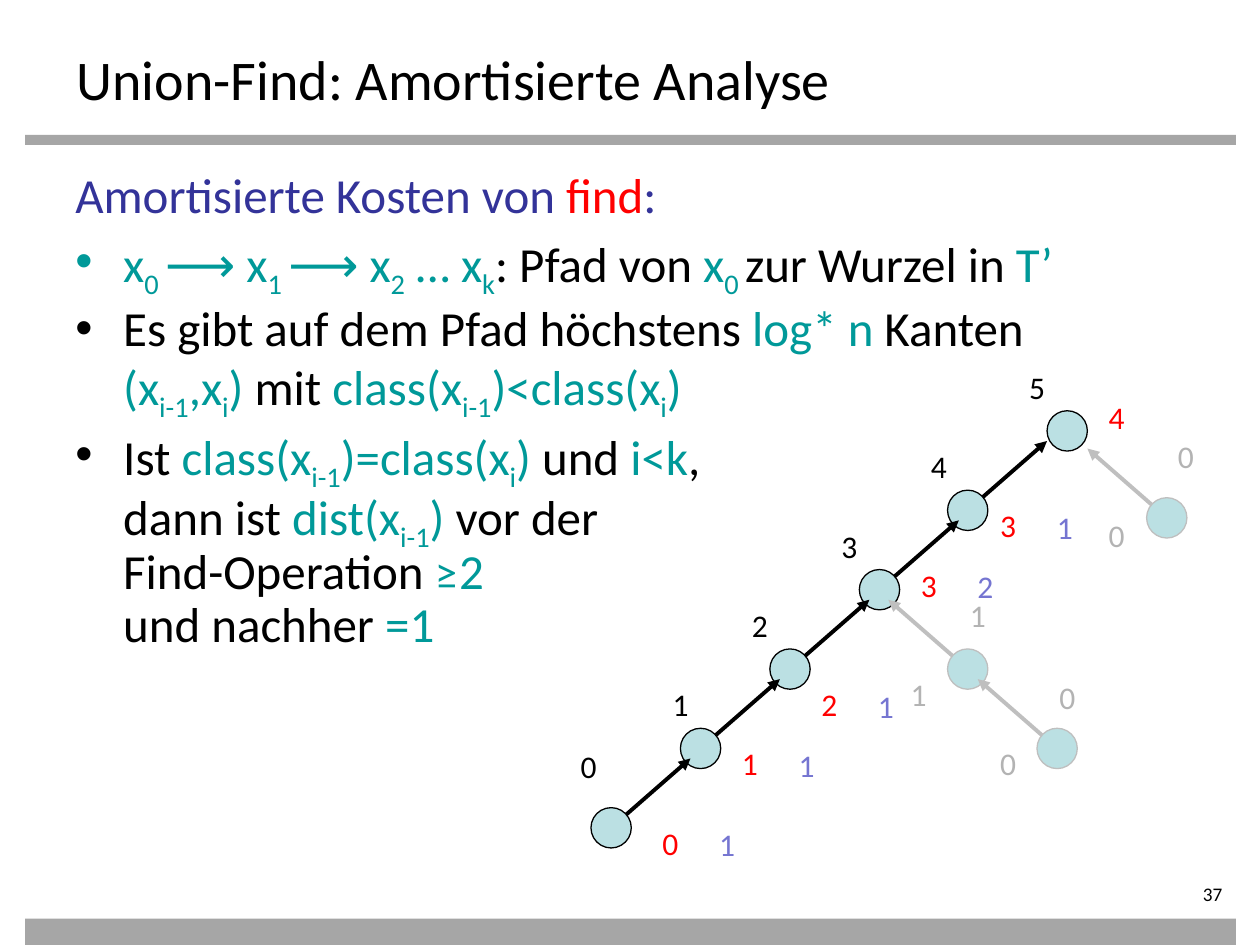
"""Build the slide on the amortised analysis of union-find."""
from lxml import etree
from pptx import Presentation
from pptx.dml.color import RGBColor
from pptx.enum.shapes import MSO_CONNECTOR, MSO_SHAPE
from pptx.enum.text import MSO_ANCHOR, PP_ALIGN
from pptx.oxml.ns import qn
from pptx.util import Pt

PX = 9144
STRAIGHT = MSO_CONNECTOR.STRAIGHT
RECTANGLE, OVAL = MSO_SHAPE.RECTANGLE, MSO_SHAPE.OVAL
TOP, LEFT, RIGHT = MSO_ANCHOR.TOP, PP_ALIGN.LEFT, PP_ALIGN.RIGHT
BLACK, RED, TEAL, NAVY = "000000", "FF0000", "009999", "333399"
VIOLET, GREY_TEXT, GREY_LINE = "7575D1", "B3B3B3", "BFBFBF"
BAR, NODE = "A6A6A6", "BBE0E3"
NODE_SIZE, EDGE_WIDTH, EDGE_HEIGHT = 32, 63, 55


def color(value):
    return RGBColor.from_string(value)


def add_text(box, text, size, text_color, wrap=False, align=LEFT):
    left, top, width, height = box
    shape = slide.shapes.add_textbox(left * PX, top * PX, width * PX, height * PX)
    frame = shape.text_frame
    frame.word_wrap = wrap
    frame.vertical_anchor = TOP
    paragraph = frame.paragraphs[0]
    paragraph.text = text
    paragraph.alignment = align
    paragraph.font.name = "Calibri"
    paragraph.font.size = Pt(size)
    paragraph.font.color.rgb = color(text_color)
    return frame


presentation = Presentation()
presentation.slide_width = 1000 * PX
presentation.slide_height = 750 * PX
slide = presentation.slides.add_slide(presentation.slide_layouts[6])

for top, height in [(107, 8), (729, 21)]:
    bar = slide.shapes.add_shape(RECTANGLE, 20 * PX, top * PX, 961 * PX, height * PX)
    bar.shadow.inherit = False
    bar.fill.solid()
    bar.fill.fore_color.rgb = color(BAR)
    bar.line.fill.background()

number = add_text((870, 700, 110, 22), "37", 11, BLACK, True, RIGHT)
number.margin_top = number.margin_bottom = 0
add_text((51, 30, 900, 55), "Union-Find: Amortisierte Analyse", 32, BLACK, True)

body = [
    [("Amortisierte Kosten von ", NAVY), ("find", RED), (":", NAVY)],
    [("x_0 _⟶ x_1 _⟶ x_2_ … x_k", TEAL), (": Pfad von ", BLACK),
     ("x_0 ", TEAL), ("zur Wurzel in ", BLACK), ("T’", TEAL)],
    [("Es gibt auf dem Pfad höchstens ", BLACK), ("log* n ", TEAL),
     ("Kanten \n", BLACK), ("(x_i-1_,x_i_) ", TEAL), ("mit ", BLACK),
     ("class(x_i-1_)<class(x_i_)", TEAL)],
    [("Ist ", BLACK), ("class(x_i-1_)=class(x_i_)", TEAL), (" und ", BLACK),
     ("i<k", TEAL), (", \ndann ist ", BLACK), ("dist(x_i-1_) ", TEAL),
     ("vor der \nFind-Operation ", BLACK), ("≥2 \n", TEAL),
     ("und nachher ", BLACK), ("=1", TEAL)],
]
special_fonts = {"⟶": ("Roboto", 28), "≥": ("Lato", 24)}
frame = slide.shapes.add_textbox(50 * PX, 131 * PX, 900 * PX, 591 * PX).text_frame
frame.word_wrap = True
for index, pieces in enumerate(body):
    paragraph = frame.add_paragraph() if index else frame.paragraphs[0]
    properties = paragraph._p.get_or_add_pPr()
    properties.set("marL", str(38 * PX))
    properties.set("indent", str(-38 * PX))
    paragraph.line_spacing = 0.9
    paragraph.space_before = Pt(5.6 if index else 0)
    if index:
        etree.SubElement(properties, qn("a:buFont"), typeface="Arial")
        etree.SubElement(properties, qn("a:buChar"), char="•")
    else:
        etree.SubElement(properties, qn("a:buNone"))
    paragraph.font.name = "Calibri"
    paragraph.font.size = Pt(28)
    for text, text_color in pieces:
        for part, script in enumerate(text.split("_")):
            for symbol in special_fonts:
                script = script.replace(symbol, f"|{symbol}|")
            for chunk in filter(None, script.replace("\n", "|\n|").split("|")):
                if chunk == "\n":
                    paragraph.add_line_break()
                    continue
                run = paragraph.add_run()
                run.text = chunk
                run.font.color.rgb = color(text_color)
                if chunk in special_fonts:
                    run.font.name, size = special_fonts[chunk]
                    run.font.size = Pt(size)
                if part % 2:
                    run.font._element.set("baseline", "-25000")

path_nodes = [(831, 326), (752, 389), (682, 452), (611, 515), (540, 578), (469, 641)]
side_nodes = [(910, 395), (752, 515), (823, 578)]
nodes = [(left, top, BLACK, 1) for left, top in path_nodes]
nodes += [(left, top, GREY_LINE, -1) for left, top in side_nodes]
for index, (left, top, line_color, direction) in enumerate(nodes):
    if index:
        x, y = left + NODE_SIZE // 2, top + NODE_SIZE // 2
        edge = slide.shapes.add_connector(
            STRAIGHT, x * PX, y * PX,
            (x + direction * EDGE_WIDTH) * PX, (y - EDGE_HEIGHT) * PX)
        edge.line.color.rgb = color(line_color)
        edge.line.width = Pt(2.25)
        etree.SubElement(edge.line._get_or_add_ln(), qn("a:tailEnd"), type="triangle")
        etree.SubElement(edge._element.spPr, qn("a:effectLst"))
    node = slide.shapes.add_shape(OVAL, left * PX, top * PX, NODE_SIZE * PX, NODE_SIZE * PX)
    node.shadow.inherit = False
    node.fill.solid()
    node.fill.fore_color.rgb = color(NODE)
    node.line.color.rgb = color(line_color)
    node.line.width = Pt(0.75)

ranks = [(451, 588), (524, 539), (587, 476), (658, 413), (729, 350), (807, 287)]
labels = [(left, top, rank, BLACK) for rank, (left, top) in enumerate(ranks)]
labels += [(925, 342, 0, GREY_TEXT), (760, 468, 1, GREY_TEXT), (831, 533, 0, GREY_TEXT),
           (870, 405, 0, GREY_TEXT), (713, 531, 1, GREY_TEXT), (784, 586, 0, GREY_TEXT),
           (870, 311, 4, RED)]
distances = [(516, 649, 0, 1), (579, 586, 1, 1), (642, 539, 2, 1),
             (721, 444, 3, 2), (784, 397, 3, 1)]
for left, top, class_value, distance in distances:
    labels += [(left, top, class_value, RED), (left + 45, top + 1, distance, VIOLET)]
for left, top, value, text_color in labels:
    add_text((left, top, 34, 40), str(value), 18, text_color)

presentation.save("out.pptx")
